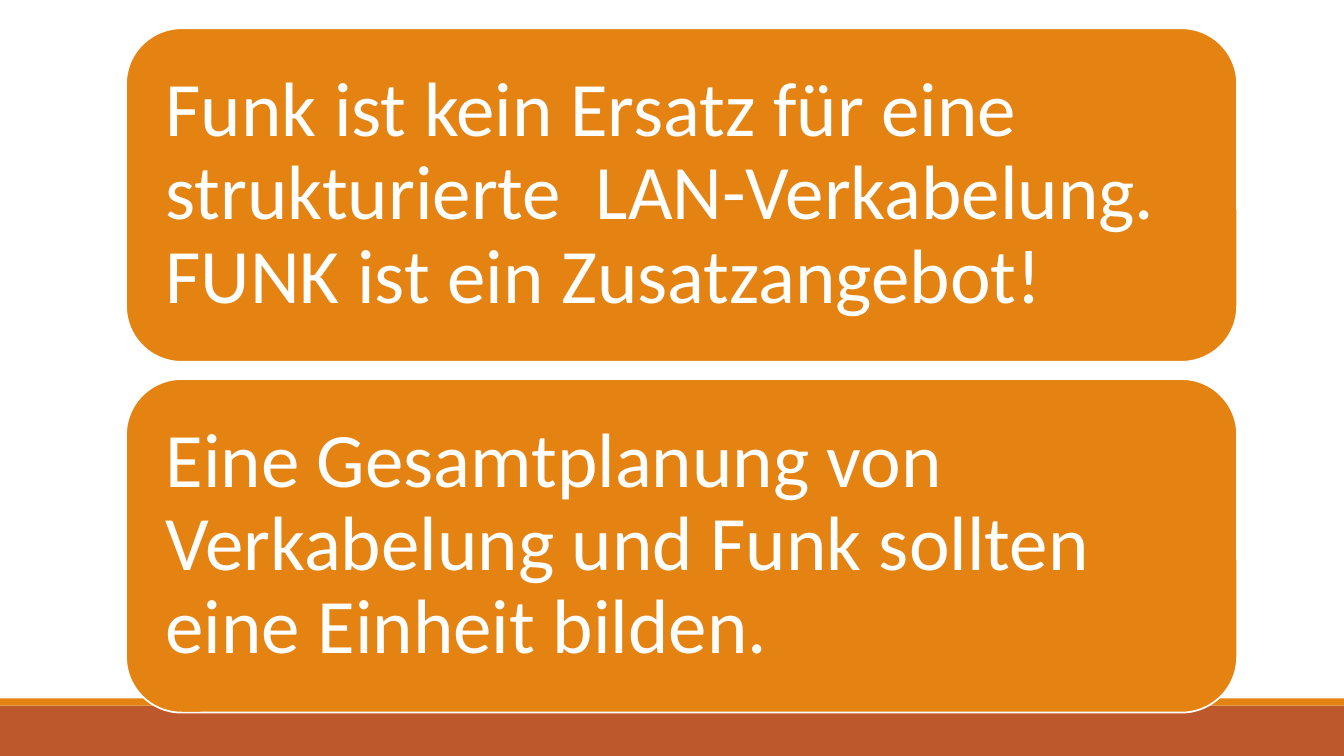
from pptx import Presentation
from pptx.dml.color import RGBColor
from pptx.enum.shapes import MSO_SHAPE
from pptx.enum.text import MSO_ANCHOR, PP_ALIGN
from pptx.util import Inches, Pt

COLORS = {"orange": "E48312", "rust": "BD582C", "white": "FFFFFF"}
STATEMENTS = [
    "Funk ist kein Ersatz für eine \nstrukturierte  LAN-Verkabelung.\nFUNK ist ein Zusatzangebot!",
    "Eine Gesamtplanung von Verkabelung und Funk sollten eine Einheit bilden.",
]


def add_box(page, kind, left, top, width, height, fill):
    box = page.shapes.add_shape(
        kind, Inches(left), Inches(top), Inches(width), Inches(height))
    box.shadow.inherit = False
    box.fill.solid()
    box.fill.fore_color.rgb = RGBColor.from_string(COLORS[fill])
    box.line.fill.background()
    return box


def write_text(box, text, size, color, font="Calibri", inset=0.23, line_spacing=0.9):
    frame = box.text_frame
    frame.word_wrap = True
    frame.vertical_anchor = MSO_ANCHOR.MIDDLE
    frame.margin_left = frame.margin_right = Inches(inset)
    frame.margin_top = frame.margin_bottom = Inches(inset)
    para = frame.paragraphs[0]
    para.text = text.replace("\n", "\v")
    para.alignment = PP_ALIGN.LEFT
    para.line_spacing = line_spacing
    for span in para.runs:
        span.font.name = font
        span.font.size = Pt(size)
        span.font.color.rgb = RGBColor.from_string(COLORS[color])


deck = Presentation()
deck.slide_width = Inches(13.33)
deck.slide_height = Inches(7.5)
page = deck.slides.add_slide(deck.slide_layouts[6])

# Footer bands
add_box(page, MSO_SHAPE.RECTANGLE, 0, 7, 13.33, 0.5, "rust")
add_box(page, MSO_SHAPE.RECTANGLE, 0, 6.93, 13.33, 0.07, "orange")

# Statement cards
for index, statement in enumerate(STATEMENTS):
    card = add_box(page, MSO_SHAPE.ROUNDED_RECTANGLE,
                   1.25, 0.28 + index * 3.48, 11.02, 3.31, "orange")
    card.line.color.rgb = RGBColor.from_string(COLORS["white"])
    card.line.width = Pt(1.25)
    write_text(card, statement, size=55, color="white")

deck.save("out.pptx")
